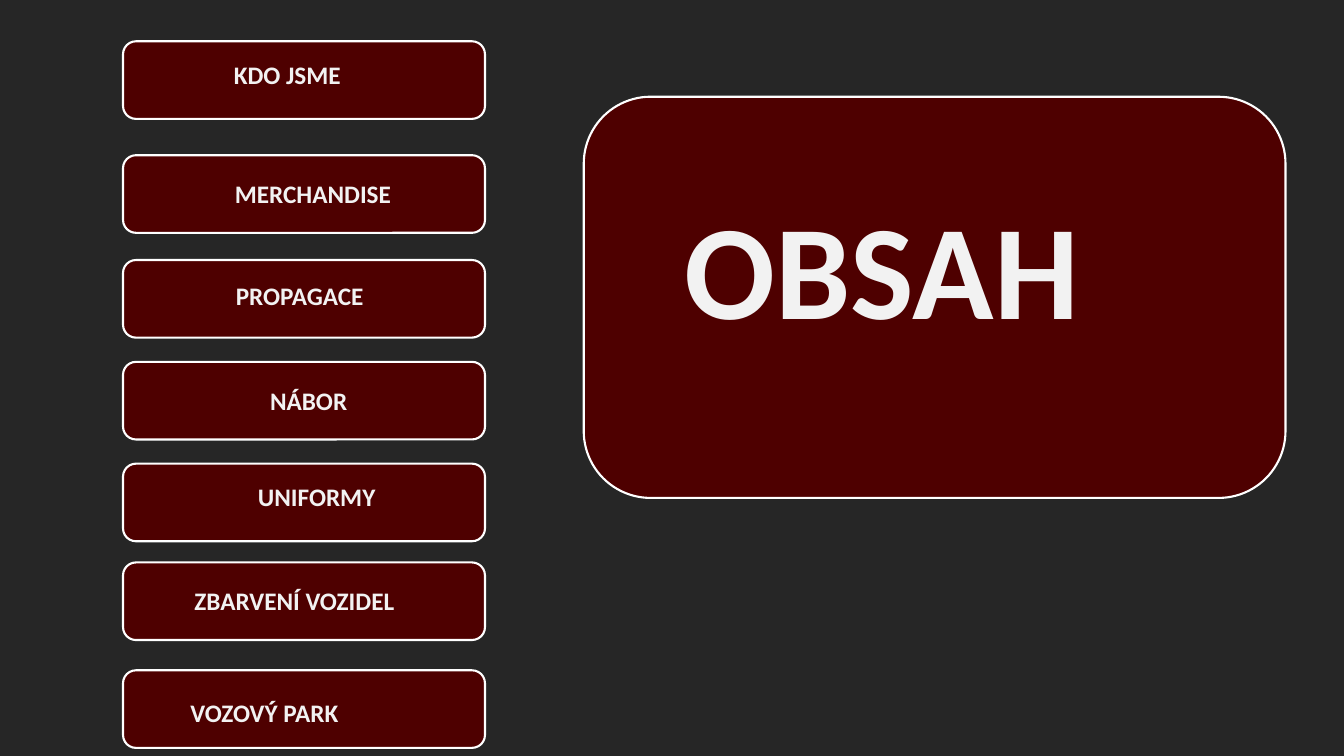
from pptx import Presentation
from pptx.dml.color import RGBColor
from pptx.enum.shapes import MSO_SHAPE
from pptx.enum.text import MSO_ANCHOR, MSO_AUTO_SIZE, PP_ALIGN
from pptx.util import Inches, Pt

COLORS = {"background": "262626", "panel": "4E0000", "outline": "FFFFFF", "text": "F2F2F2"}

# label, top of its button, then left, top and width of its text
MENU = [
    ("KDO JSME", 0.41, 2.22, 0.54, 1.61),
    ("MERCHANDISE", 1.54, 2.23, 1.72, 2.09),
    ("PROPAGACE", 2.58, 2.24, 2.73, 1.92),
    ("NÁBOR", 3.59, 2.58, 3.77, 1.22),
    ("UNIFORMY", 4.6, 2.46, 4.73, 1.62),
    ("ZBARVENÍ VOZIDEL", 5.58, 1.83, 5.76, 3.17),
    ("VOZOVÝ PARK", 6.65, 1.79, 6.87, 2.93),
]


def add_panel(left, top, width, height):
    panel = page.shapes.add_shape(
        MSO_SHAPE.ROUNDED_RECTANGLE, Inches(left), Inches(top), Inches(width), Inches(height)
    )
    panel.shadow.inherit = False
    panel.fill.solid()
    panel.fill.fore_color.rgb = RGBColor.from_string(COLORS["panel"])
    panel.line.color.rgb = RGBColor.from_string(COLORS["outline"])
    panel.line.width = Pt(1.5)


def write_text(box, text, size):
    frame = box.text_frame
    frame.text = text
    frame.word_wrap = True
    frame.auto_size = MSO_AUTO_SIZE.NONE
    frame.vertical_anchor = MSO_ANCHOR.TOP
    para = frame.paragraphs[0]
    para.alignment = PP_ALIGN.LEFT
    font = para.runs[0].font
    font.name = "Calibri"
    font.size = Pt(size)
    font.bold = True
    font.color.rgb = RGBColor.from_string(COLORS["text"])


deck = Presentation()
deck.slide_width, deck.slide_height = Inches(13.33), Inches(7.5)
page = deck.slides.add_slide(deck.slide_layouts[5])
page.background.fill.solid()
page.background.fill.fore_color.rgb = RGBColor.from_string(COLORS["background"])

for label, button_top, left, top, width in MENU:
    add_panel(1.22, button_top, 3.59, 0.77)
    box = page.shapes.add_textbox(Inches(left), Inches(top), Inches(width), Inches(0.4))
    write_text(box, label, 18)

add_panel(5.79, 0.96, 6.96, 3.98)
title = page.shapes.title
title.left, title.top = Inches(6.69), Inches(1.79)
title.width, title.height = Inches(5.46), Inches(1.72)
write_text(title, "OBSAH", 96)
# Bring the title in front of its panel
page.shapes._spTree.append(title._element)

deck.save("out.pptx")
